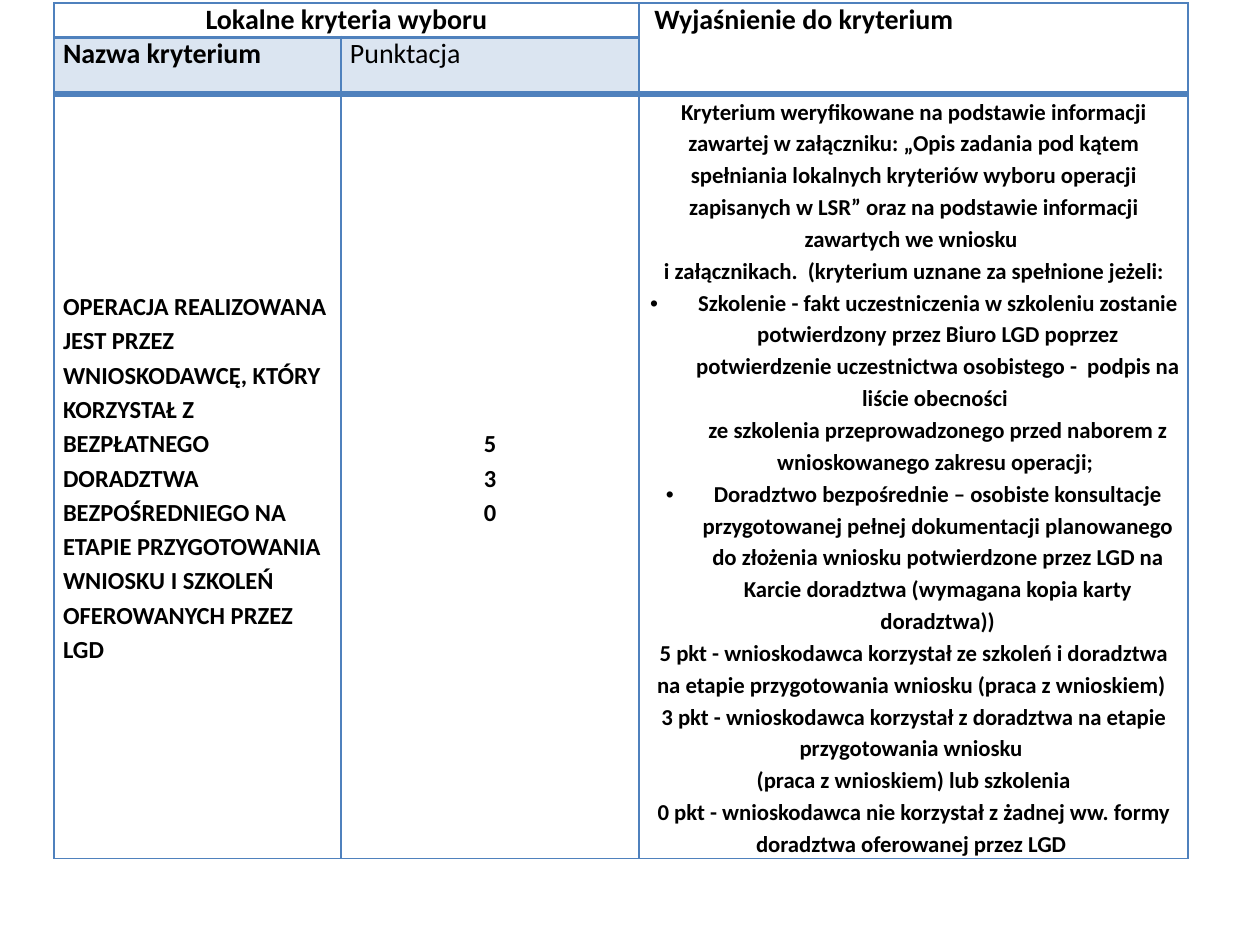
from dataclasses import dataclass

from lxml import etree
from pptx import Presentation
from pptx.dml.color import RGBColor
from pptx.enum.text import MSO_ANCHOR, PP_ALIGN
from pptx.oxml.ns import qn
from pptx.util import Emu, Pt

LEFT, CENTER = PP_ALIGN.LEFT, PP_ALIGN.CENTER
TOP, MIDDLE = MSO_ANCHOR.TOP, MSO_ANCHOR.MIDDLE
PX_PER_INCH = 126
BLANK_LAYOUT = 6


def px(length):
    return Emu(round(length * 914400 / PX_PER_INCH))


@dataclass(frozen=True)
class Theme:
    font: str = "Calibri"
    text: str = "000000"
    accent: str = "4F81BD"
    tint: int = 20
    header: int = 16
    body: int = 14
    detail: int = 13
    spacing: float = 1.15
    inset: int = 9
    indent: int = 48


@dataclass(frozen=True)
class Borders:
    """Widths in points, in the order the cell stores them."""
    left: float = 1
    right: float = 1
    top: float = 1
    bottom: float = 1

    def sides(self):
        return zip(("a:lnL", "a:lnR", "a:lnT", "a:lnB"),
                   (self.left, self.right, self.top, self.bottom))


class SlideBuilder:
    def __init__(self, slide, theme):
        self.slide = slide
        self.theme = theme

    def table(self, left, top, width, height, columns, rows):
        frame = self.slide.shapes.add_table(
            len(rows), len(columns), px(left), px(top), px(width), px(height))
        table = frame.table
        table.first_row = table.horz_banding = False
        for column, size in zip(table.columns, columns):
            column.width = px(size)
        for row, size in zip(table.rows, rows):
            row.height = px(size)
        frame.height = px(height)
        return table

    def cell(self, cell, borders, tinted=False, anchor=TOP):
        cell.margin_left = cell.margin_right = px(self.theme.inset)
        cell.margin_top = cell.margin_bottom = 0
        cell.vertical_anchor = anchor
        if tinted:
            cell.fill.solid()
            cell.fill.fore_color.rgb = RGBColor.from_string(self.theme.accent)
        else:
            cell.fill.background()
        properties = cell._tc.get_or_add_tcPr()
        if tinted:
            color = properties.find(".//" + qn("a:srgbClr"))
            etree.SubElement(color, qn("a:alpha"), val=str(self.theme.tint * 1000))
        for index, (tag, width) in enumerate(borders.sides()):
            line = etree.Element(qn(tag), w=str(Pt(width)))
            fill = etree.SubElement(line, qn("a:solidFill"))
            etree.SubElement(fill, qn("a:srgbClr"), val=self.theme.accent)
            properties.insert(index, line)

    def text(self, cell, paragraphs, size, align=LEFT, bold=True, spacing=None):
        """Each paragraph is a list of lines; a leading • marks a bullet."""
        frame = cell.text_frame
        for index, lines in enumerate(paragraphs):
            para = frame.add_paragraph() if index else frame.paragraphs[0]
            para.alignment = align
            if spacing:
                para.line_spacing = spacing
            if lines[0].startswith("•"):
                self.bullet(para)
            for number, line in enumerate(lines):
                if number:
                    para.add_line_break()
                span = para.add_run()
                span.text = line.removeprefix("•")
                span.font.name = self.theme.font
                span.font.size = Pt(size)
                span.font.bold = bold
                span.font.color.rgb = RGBColor.from_string(self.theme.text)

    def bullet(self, para):
        properties = para._p.get_or_add_pPr()
        indent = px(self.theme.indent)
        properties.set("marL", str(indent))
        properties.set("indent", str(-indent))
        etree.SubElement(properties, qn("a:buFont"), typeface="Arial")
        etree.SubElement(properties, qn("a:buChar"), char="•")


CRITERION = (
    "OPERACJA REALIZOWANA JEST PRZEZ WNIOSKODAWCĘ, KTÓRY KORZYSTAŁ Z "
    "BEZPŁATNEGO DORADZTWA BEZPOŚREDNIEGO NA ETAPIE PRZYGOTOWANIA WNIOSKU "
    "I SZKOLEŃ OFEROWANYCH PRZEZ LGD")

EXPLANATION = [
    ["Kryterium weryfikowane na podstawie informacji zawartej w załączniku: "
     "„Opis zadania pod kątem spełniania lokalnych kryteriów wyboru operacji "
     "zapisanych w LSR” oraz na podstawie informacji zawartych we wniosku ",
     "i załącznikach.  (kryterium uznane za spełnione jeżeli:"],
    ["•Szkolenie - fakt uczestniczenia w szkoleniu zostanie potwierdzony przez "
     "Biuro LGD poprzez potwierdzenie uczestnictwa osobistego -  podpis na "
     "liście obecności ",
     "ze szkolenia przeprowadzonego przed naborem z wnioskowanego zakresu "
     "operacji; "],
    ["•Doradztwo bezpośrednie – osobiste konsultacje przygotowanej pełnej "
     "dokumentacji planowanego do złożenia wniosku potwierdzone przez LGD na "
     "Karcie doradztwa (wymagana kopia karty doradztwa))"],
    ["5 pkt - wnioskodawca korzystał ze szkoleń i doradztwa na etapie "
     "przygotowania wniosku (praca z wnioskiem) ",
     "3 pkt - wnioskodawca korzystał z doradztwa na etapie przygotowania "
     "wniosku ",
     "(praca z wnioskiem) lub szkolenia"],
    ["0 pkt - wnioskodawca nie korzystał z żadnej ww. formy doradztwa "
     "oferowanej przez LGD "],
]


def main():
    deck = Presentation()
    deck.slide_width, deck.slide_height = px(1260), px(945)
    theme = Theme()
    page = SlideBuilder(
        deck.slides.add_slide(deck.slide_layouts[BLANK_LAYOUT]), theme)

    # Table grid
    table = page.table(54, 3, 1134, 843, columns=(287, 298, 549), rows=(6, 57, 662))
    row_borders = (Borders(bottom=2), Borders(), Borders(top=4))
    for row, borders in enumerate(row_borders):
        for column in range(3):
            page.cell(table.cell(row, column), borders,
                      tinted=row == 1 and column < 2,
                      anchor=MIDDLE if row == 2 else TOP)
    table.cell(0, 0).merge(table.cell(0, 1))
    table.cell(0, 2).merge(table.cell(1, 2))

    # Headings
    page.text(table.cell(0, 0), [["Lokalne kryteria wyboru"]], theme.header, CENTER)
    page.text(table.cell(0, 2), [[" Wyjaśnienie do kryterium"]], theme.header)
    page.text(table.cell(1, 0), [["Nazwa kryterium"]], theme.header)
    page.text(table.cell(1, 1), [["Punktacja"]], theme.header, bold=False)

    # Criterion, points and explanation
    page.text(table.cell(2, 0), [[CRITERION]], theme.body, spacing=theme.spacing)
    page.text(table.cell(2, 1), [["5"], ["3"], ["0"]], theme.body, CENTER,
              spacing=theme.spacing)
    page.text(table.cell(2, 2), EXPLANATION, theme.detail, CENTER,
              spacing=theme.spacing)

    deck.save("out.pptx")


if __name__ == "__main__":
    main()
